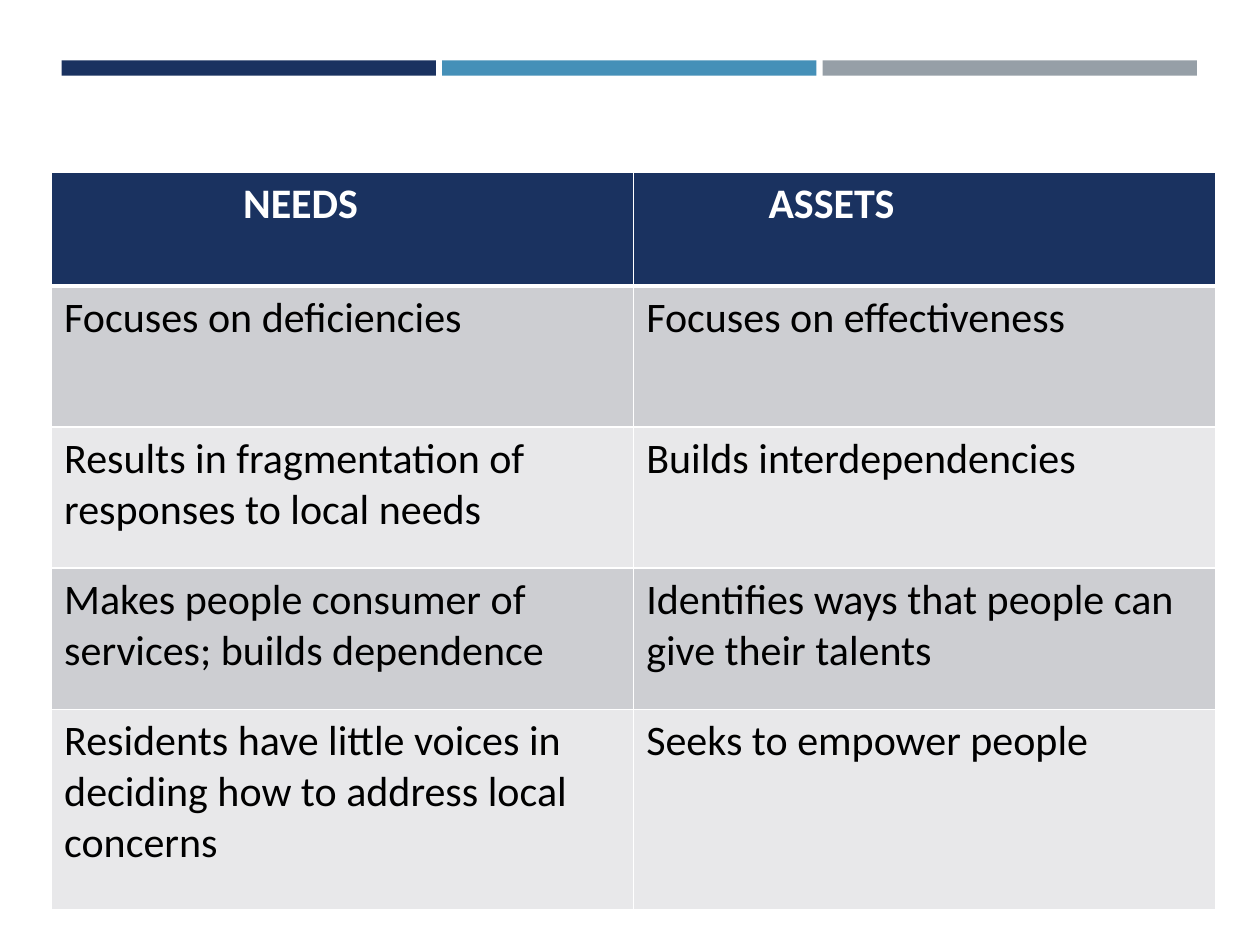
"""Build a slide comparing needs-based and assets-based approaches in a table."""
from lxml.etree import SubElement
from pptx import Presentation
from pptx.dml.color import RGBColor
from pptx.enum.shapes import MSO_SHAPE
from pptx.oxml.ns import qn
from pptx.util import Inches, Pt

COLORS = {
    "navy": "1A3260", "blue": "4590B8", "gray": "969FA7",
    "dark_band": "CDCED2", "light_band": "E8E8EA",
    "white": "FFFFFF", "black": "000000",
}
BARS = ["navy", "blue", "gray"]
BAR_LEFT, BAR_TOP, BAR_WIDTH, BAR_HEIGHT, BAR_STEP = 0.49, 0.48, 2.97, 0.12, 3.02

ROWS = [
    ("NEEDS", "ASSETS"),
    ("Focuses on deficiencies", "Focuses on effectiveness"),
    ("Results in fragmentation of responses to local needs", "Builds interdependencies"),
    ("Makes people consumer of services; builds dependence",
     "Identifies ways that people can give their talents"),
    ("Residents have little voices in deciding how to address local concerns",
     "Seeks to empower people"),
]
ROW_HEIGHTS = [0.9, 1.12, 1.12, 1.12, 1.59]
HEADER_MARGINS = [1.52, 1.07]
TABLE_LEFT, TABLE_TOP, COLUMN_WIDTH = 0.41, 1.37, 4.62


def color(name):
    return RGBColor.from_string(COLORS[name])


def add_bars(page):
    for index, name in enumerate(BARS):
        bar = page.shapes.add_shape(
            MSO_SHAPE.RECTANGLE, Inches(BAR_LEFT + index * BAR_STEP), Inches(BAR_TOP),
            Inches(BAR_WIDTH), Inches(BAR_HEIGHT))
        bar.shadow.inherit = False
        bar.fill.solid()
        bar.fill.fore_color.rgb = color(name)
        bar.line.fill.background()


def set_borders(cell, widths):
    properties = cell._tc.get_or_add_tcPr()
    for side, width in widths.items():
        line = SubElement(properties, qn(f"a:ln{side}"), w=str(Pt(width)))
        fill = SubElement(line, qn("a:solidFill"))
        SubElement(fill, qn("a:srgbClr"), val=COLORS["white"])


def style_cell(cell, text, row, column):
    header = row == 0
    set_borders(cell, {"L": 1, "R": 1, "T": 3 if row == 1 else 1, "B": 3 if header else 1})
    cell.fill.solid()
    band = "dark_band" if row % 2 else "light_band"
    cell.fill.fore_color.rgb = color("navy" if header else band)
    if header:
        cell.margin_left = Inches(HEADER_MARGINS[column])
    cell.text = text
    font = cell.text_frame.paragraphs[0].font
    font.name = "Calibri"
    font.size = Pt(24)
    font.bold = header
    font.color.rgb = color("white" if header else "black")


def add_comparison(page):
    columns = len(ROWS[0])
    table = page.shapes.add_table(
        len(ROWS), columns, Inches(TABLE_LEFT), Inches(TABLE_TOP),
        Inches(COLUMN_WIDTH * columns), Inches(sum(ROW_HEIGHTS))).table
    for column in table.columns:
        column.width = Inches(COLUMN_WIDTH)
    for row, (texts, height) in enumerate(zip(ROWS, ROW_HEIGHTS)):
        table.rows[row].height = Inches(height)
        for column, text in enumerate(texts):
            style_cell(table.cell(row, column), text, row, column)


def main():
    deck = Presentation()
    deck.slide_width, deck.slide_height = Inches(10), Inches(7.5)
    page = deck.slides.add_slide(deck.slide_layouts[6])
    add_bars(page)
    add_comparison(page)
    deck.save("out.pptx")


if __name__ == "__main__":
    main()
